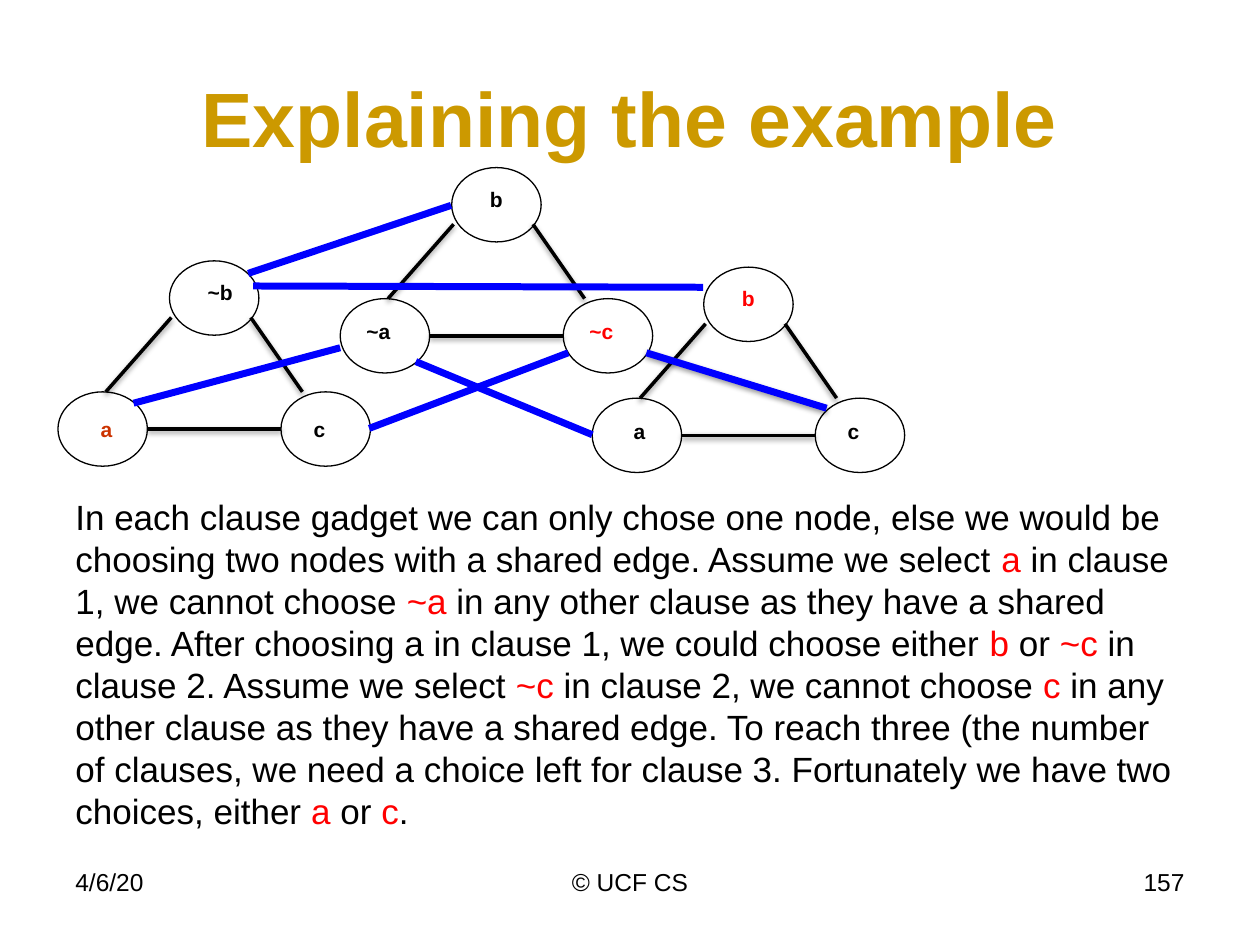
from lxml import etree
from pptx import Presentation, util as u
from pptx.dml.color import RGBColor
from pptx.enum import shapes, text
from pptx.oxml import ns

BLACK = RGBColor(0x00, 0x00, 0x00)
GOLD = RGBColor(0xCC, 0x99, 0x00)
RED = RGBColor(0xFF, 0x00, 0x00)
RUST = RGBColor(0xCC, 0x33, 0x00)
BLUE = RGBColor(0x00, 0x00, 0xFF)

WIDTH, HEIGHT = u.Inches(10), u.Inches(7.5)
COLS, ROWS = 100, 75
NODE_W, NODE_H = 7.1, 5.9
GADGET_W, GADGET_H = 24.8, 16.3
LEFT, CENTER, RIGHT = text.PP_ALIGN.LEFT, text.PP_ALIGN.CENTER, text.PP_ALIGN.RIGHT


def col(n):
    return round(WIDTH * n / COLS)


def row(n):
    return round(HEIGHT * n / ROWS)


def grid(box):
    x, y, w, h = box
    return col(x), row(y), col(w), row(h)


def add_text(s, box, runs, size, bold=False, align=LEFT, wrap=True,
             anchor=text.MSO_ANCHOR.TOP, spacing=None):
    tf = s.shapes.add_textbox(*grid(box)).text_frame
    for name, value in {"word_wrap": wrap, "vertical_anchor": anchor}.items():
        setattr(tf, name, value)
    p = tf.paragraphs[0]
    for name, value in {"alignment": align, "line_spacing": spacing}.items():
        setattr(p, name, value)
    for words, color in runs:
        r = p.add_run()
        r.text = words
        for name, value in {"name": "Arial", "size": u.Pt(size), "bold": bold}.items():
            setattr(r.font, name, value)
        r.font.color.rgb = color


def add_line(s, start, end, color, width, shadow=False):
    sp = s.shapes.add_connector(shapes.MSO_CONNECTOR.STRAIGHT,
                                col(start[0]), row(start[1]), col(end[0]), row(end[1]))
    sp.line.color.rgb = color
    sp.line.width = u.Pt(width)
    effects = etree.SubElement(sp._element.spPr, ns.qn("a:effectLst"))
    if shadow:
        outer = etree.SubElement(effects, ns.qn("a:outerShdw"), blurRad=str(u.Pt(3.1)),
                                 dist=str(u.Pt(1.6)), dir="5400000", rotWithShape="0")
        tint = etree.SubElement(outer, ns.qn("a:srgbClr"), val=str(BLACK))
        etree.SubElement(tint, ns.qn("a:alpha"), val="38000")


def add_node(s, x, y):
    sp = s.shapes.add_shape(shapes.MSO_SHAPE.OVAL, *grid((x, y, NODE_W, NODE_H)))
    sp.shadow.inherit = False
    sp.fill.background()
    sp.line.color.rgb = BLACK
    sp.line.width = u.Pt(0.75)


def add_gadget(s, box, labels):
    x, y, w, h = box
    right, base = w - NODE_W, h - NODE_H
    middle = base + NODE_H / 2
    edges = [((NODE_W, middle), (right, middle)),
             ((9, 4.5), (3.8, base)),
             ((15.3, 4.5), (19.4, base))]
    for (x1, y1), (x2, y2) in edges:
        add_line(s, (x + x1, y + y1), (x + x2, y + y2), BLACK, 2, shadow=True)
    for dx, dy in [(right / 2, 0), (0, base), (right, base)]:
        add_node(s, x + dx, y + dy)
    for words, color, dx, dy in labels:
        add_text(s, (x + dx, y + dy, 4.4, 3), [(words, color)], 12, bold=True, wrap=False)


def add_title(s, box):
    add_text(s, box, [("Explaining the example", GOLD)], 44, bold=True,
             align=CENTER, anchor=text.MSO_ANCHOR.MIDDLE)


def add_graph(s, box):
    x, y, w, h = box
    gadgets = [
        (0, 7.4, [("~b", BLACK, 10.9, 1), ("a", RUST, 2.4, 11.9), ("c", BLACK, 19.3, 11.9)]),
        (22.4, 0, [("b", BLACK, 10.9, 1), ("~a", BLACK, 1.1, 11.5), ("~c", RED, 18.8, 11.5)]),
        (42.4, 7.9, [("b", RED, 10.9, 1), ("a", BLACK, 2.3, 11.5), ("c", BLACK, 19.3, 11.5)]),
    ]
    for dx, dy, labels in gadgets:
        add_gadget(s, (x + dx, y + dy, GADGET_W, GADGET_H), labels)
    conflicts = [
        ((6, 18.7), (22.4, 14.3), False),
        ((15.1, 8.4), (31.2, 3), False),
        ((15.5, 9.4), (51.2, 9.5), False),
        ((28.4, 15.4), (42.4, 21.2), False),
        ((24.7, 20.7), (40.5, 14.7), False),
        ((46.7, 14.7), (61, 19.1), True),
    ]
    for (x1, y1), (x2, y2), shadow in conflicts:
        add_line(s, (x + x1, y + y1), (x + x2, y + y2), BLUE, 4, shadow)


def add_body(s, box):
    runs = [
        ("In each clause gadget we can only chose one node, else we would be choosing "
         "two nodes with a shared edge. Assume we select ", BLACK),
        ("a", RED), (" in clause 1, we cannot choose ", BLACK),
        ("~a", RED),
        (" in any other clause as they have a shared edge. After choosing a in clause 1, "
         "we could choose either ", BLACK),
        ("b", RED), (" or ", BLACK), ("~c", RED),
        (" in clause 2. Assume we select ", BLACK),
        ("~c", RED), (" in clause 2, we cannot choose ", BLACK),
        ("c", RED),
        (" in any other clause as they have a shared edge. To reach three (the number of "
         "clauses, we need a choice left for clause 3. Fortunately we have two choices, "
         "either ", BLACK),
        ("a", RED), (" or ", BLACK), ("c", RED), (".", BLACK),
    ]
    add_text(s, box, runs, 20, spacing=u.Pt(24))


def add_footer(s, box):
    x, y, w, h = box
    parts = [("4/6/20", 0, 23.3, LEFT),
             ("© UCF CS", (w - 31.7) / 2, 31.7, CENTER),
             ("157", w - 23.3, 23.3, RIGHT)]
    for words, dx, width, align in parts:
        add_text(s, (x + dx, y, width, h), [(words, BLACK)], 14, align=align)


def main():
    prs = Presentation()
    prs.slide_width, prs.slide_height = WIDTH, HEIGHT
    s = prs.slides.add_slide(prs.slide_layouts[6])
    add_title(s, (5, 3, 90, 12.5))
    add_body(s, (5, 38.8, 90, 28.2))
    add_footer(s, (5, 68.3, 90, 5.2))
    add_graph(s, (4.6, 13.3, 67.2, 24.2))
    prs.save("out.pptx")


if __name__ == "__main__":
    main()
